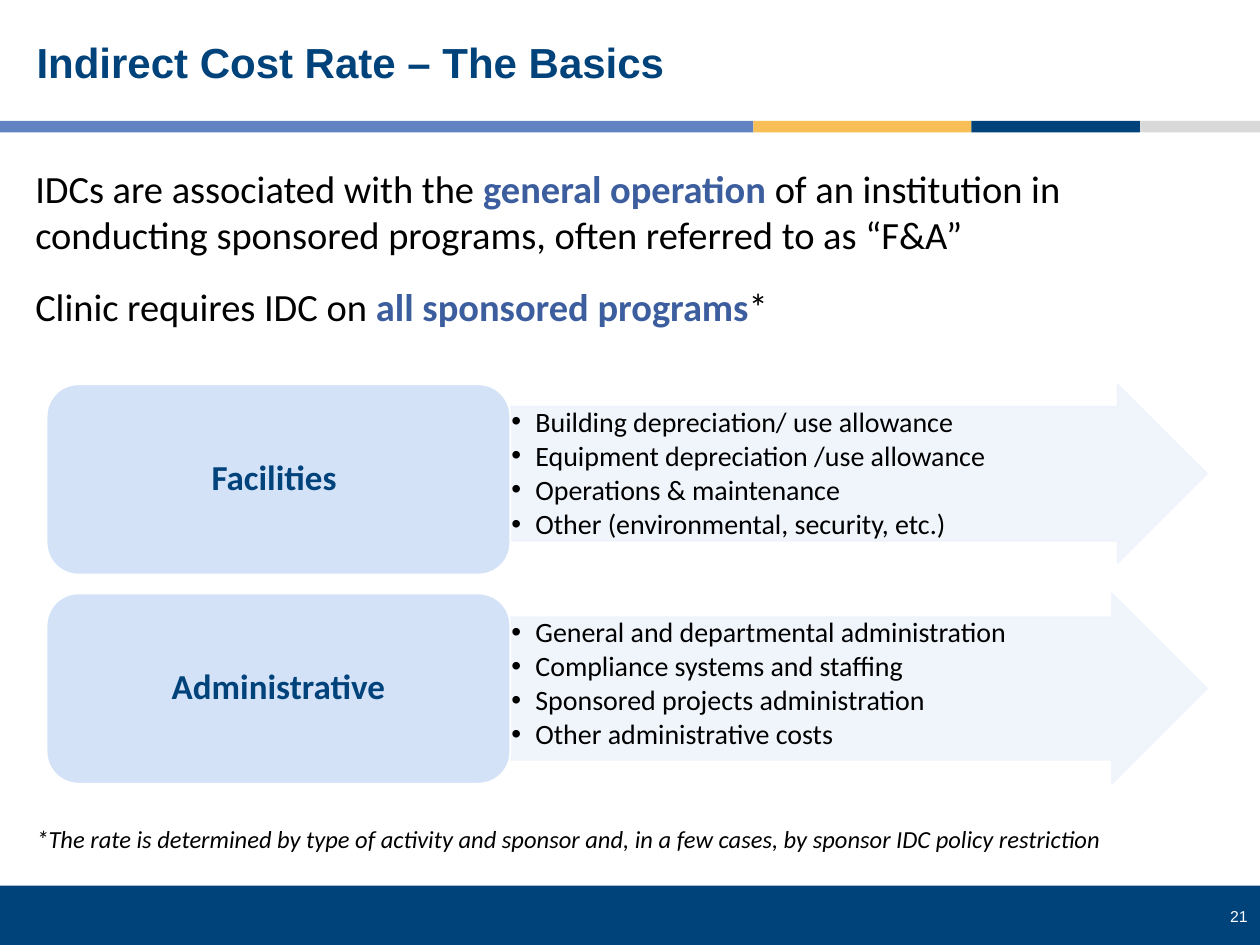
from lxml import etree
from pptx import Presentation
from pptx.dml.color import RGBColor
from pptx.enum.shapes import MSO_SHAPE
from pptx.enum.text import MSO_ANCHOR, MSO_AUTO_SIZE, PP_ALIGN
from pptx.oxml.ns import qn
from pptx.util import Inches, Pt

RECT, ROUND, ARROW = MSO_SHAPE.RECTANGLE, MSO_SHAPE.ROUNDED_RECTANGLE, MSO_SHAPE.RIGHT_ARROW
TOP, MID = MSO_ANCHOR.TOP, MSO_ANCHOR.MIDDLE
LEFT, CENTER, RIGHT = PP_ALIGN.LEFT, PP_ALIGN.CENTER, PP_ALIGN.RIGHT

# Content: each paragraph is a list of (text, style) runs
TITLE = "Indirect Cost Rate – The Basics"
INTRO = [
    [("IDCs are associated with the ", "body"), ("general operation ", "key"),
     ("of an institution in conducting sponsored programs, often referred to as “F&A”", "body")],
    [("Clinic requires IDC on ", "body"), ("all sponsored programs", "key"), ("*", "body")],
]
GROUPS = [  # label runs, arrow height, items
    ([("Facilities", "label"), (" ", "gap")], 1.42,
     ["Building depreciation/ use allowance", "Equipment depreciation /use allowance",
      "Operations & maintenance", "Other (environmental, security, etc.)"]),
    ([("Administrative", "label")], 1.51,
     ["General and departmental administration", "Compliance systems and staffing",
      "Sponsored projects administration", "Other administrative costs"]),
]
NOTE = ("*The rate is determined by type of activity and sponsor and, in a few cases, "
        "by sponsor IDC policy restriction")
PAGE = "21"
BANDS = [("blue", 5.98), ("gold", 1.73), ("navy", 1.34), ("gray", 0.95)]

THEME = {
    "color": {"navy": "00437B", "blue": "6283C2", "gold": "F8BF56", "gray": "D9D9D9",
              "ink": "000000", "accent": "3D5E9E", "white": "FFFFFF",
              "card": "D4E2F8", "pale": "EFF4FC"},
    "text": {  # font, size, color, bold, italic
        "title": ("Arial", 24, "navy", True, False),
        "body": ("Calibri", 22, "ink", False, False),
        "key": ("Calibri", 22, "accent", True, False),
        "label": ("Calibri", 20, "navy", True, False),
        "gap": ("Arial", 18, "navy", True, False),
        "item": ("Calibri", 16, "ink", False, False),
        "note": ("Calibri", 14, "ink", False, True),
        "page": ("Arial", 9, "white", False, False),
    },
}


def color(name):
    return RGBColor.from_string(THEME["color"][name])


def place(shape, left, top, width, height):
    shape.left, shape.top = Inches(left), Inches(top)
    shape.width, shape.height = Inches(width), Inches(height)


def bullet(par, char=None, indent=0.0):
    props = par._p.get_or_add_pPr()
    props.set("marL", str(Inches(indent)))
    props.set("indent", str(-Inches(indent)))
    if char:
        etree.SubElement(props, qn("a:buFont")).set("typeface", "Arial")
        etree.SubElement(props, qn("a:buChar")).set("char", char)
    else:
        etree.SubElement(props, qn("a:buNone"))


def write(shape, pars, align=LEFT, anchor=TOP, inset=(0.1, 0.05),
          line=1.0, before=0, after=0, char=None, indent=0.0):
    frame = shape.text_frame
    frame.word_wrap, frame.auto_size = True, MSO_AUTO_SIZE.NONE
    frame.vertical_anchor = anchor
    frame.margin_left = frame.margin_right = Inches(inset[0])
    frame.margin_top = frame.margin_bottom = Inches(inset[1])
    for i, runs in enumerate(pars):
        par = frame.add_paragraph() if i else frame.paragraphs[0]
        bullet(par, char, indent)
        par.alignment, par.line_spacing = align, line
        par.space_before, par.space_after = Pt(before if i else 0), Pt(after)
        for text, style in runs:
            run = par.add_run()
            run.text = text
            font = run.font
            font.name, size, tint, font.bold, font.italic = THEME["text"][style]
            font.size, font.color.rgb = Pt(size), color(tint)


def draw(slide, kind, box, fill, edge=None):
    shape = slide.shapes.add_shape(kind, *map(Inches, box))
    shape.shadow.inherit = False
    shape.fill.solid()
    shape.fill.fore_color.rgb = color(fill)
    if edge:
        shape.line.color.rgb, shape.line.width = color(edge), Pt(1)
    else:
        shape.line.fill.background()
    return shape


def fade(shape, share):
    for tint in shape._element.spPr.iter(qn("a:srgbClr")):
        etree.SubElement(tint, qn("a:alpha")).set("val", str(share * 1000))


def label(slide, box, pars, **form):
    write(slide.shapes.add_textbox(*map(Inches, box)), pars, **form)


def main():
    deck = Presentation()
    deck.slide_width, deck.slide_height = Inches(10), Inches(7.5)
    slide = deck.slides.add_slide(deck.slide_layouts[1])

    # Footer and page number
    draw(slide, RECT, (0, 7.03, 10, 0.47), "navy")
    label(slide, (9.31, 7.15, 0.69, 0.25), [[(PAGE, "page")]], align=RIGHT)

    # Color bands under the title
    left = 0
    for tint, width in BANDS:
        draw(slide, RECT, (left, 0.96, width, 0.09), tint)
        left += width

    # Title and introduction
    title, body = slide.placeholders
    place(title, 0.19, 0.17, 9.57, 0.69)
    write(title, [[(TITLE, "title")]], anchor=MID, line=0.9)
    place(body, 0.18, 1.26, 9.12, 1.72)
    write(body, INTRO, before=14.6)

    # Cost groups: an arrow of items beside each card
    edge, top, wide, high, step = 0.37, 3.05, 3.68, 1.51, 1.66
    for i, (name, tall, items) in enumerate(GROUPS):
        y = top + i * step
        arrow = draw(slide, ARROW, (edge + wide, y, 5.53, tall), "pale", "pale")
        arrow.adjustments[0], arrow.adjustments[1] = 0.75, 0.5
        fade(arrow, 90)
        write(arrow, [[(item, "item")] for item in items], inset=(0.01, 0.01),
              line=0.9, after=2.2, char="•", indent=0.19)
        card = draw(slide, ROUND, (edge, y, wide, high), "card", "white")
        write(card, [name], align=CENTER, anchor=MID, inset=(0.08, 0.04), line=0.9)

    # Footnote
    label(slide, (0.19, 6.49, 9.57, 0.34), [[(NOTE, "note")]])
    deck.save("out.pptx")


if __name__ == "__main__":
    main()
